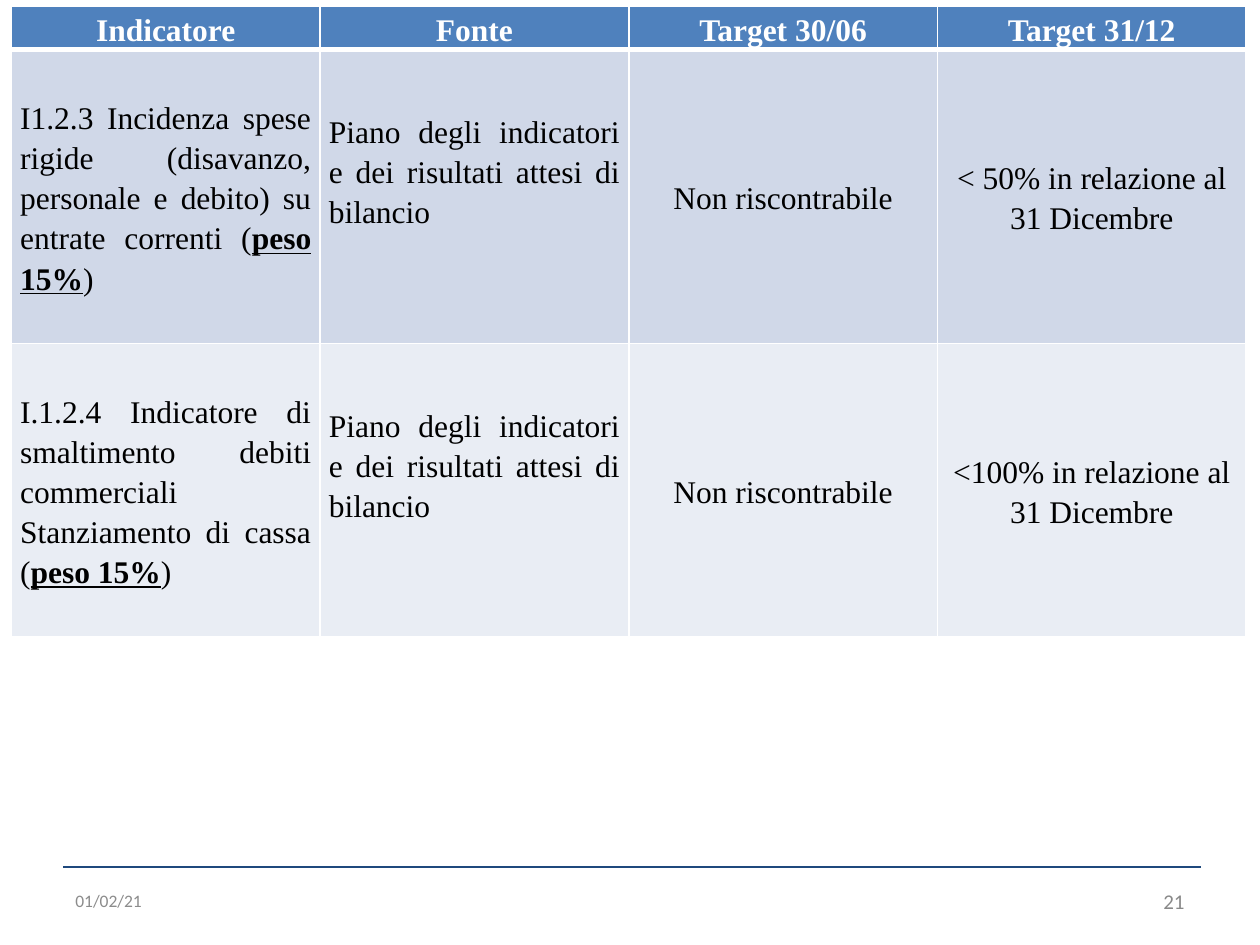
from dataclasses import dataclass

from lxml import etree
from pptx import Presentation
from pptx.dml.color import RGBColor
from pptx.enum.text import MSO_ANCHOR, PP_ALIGN
from pptx.oxml.ns import qn
from pptx.util import Inches, Pt

MIDDLE = MSO_ANCHOR.MIDDLE
LEFT, CENTER, RIGHT = PP_ALIGN.LEFT, PP_ALIGN.CENTER, PP_ALIGN.RIGHT
JUSTIFY = PP_ALIGN.JUSTIFY


@dataclass(frozen=True)
class Theme:
    serif: str = "Times New Roman"
    sans: str = "Calibri"
    head: str = "4F81BD"
    bands: tuple = ("D0D8E8", "E9EDF4")
    white: str = "FFFFFF"
    ink: str = "000000"
    rule: str = "1F497D"
    date: str = "8C8C8C"
    page: str = "898989"
    body_size: int = 18
    date_size: int = 10
    page_size: int = 12


THEME = Theme()
HEADS = ("Indicatore", "Fonte", "Target 30/06", "Target 31/12")
SOURCE = "Piano degli indicatori e dei risultati attesi di bilancio"
NONE_YET = "Non riscontrabile"
WEIGHT = "peso 15%"
ROWS = (
    ("I1.2.3 Incidenza spese rigide (disavanzo, personale e debito) "
     "su entrate correnti (", SOURCE, NONE_YET,
     "< 50% in relazione al 31 Dicembre"),
    ("I.1.2.4 Indicatore di smaltimento debiti commerciali "
     "Stanziamento di cassa (", SOURCE, NONE_YET,
     "<100% in relazione al 31 Dicembre"),
)


def style(para, face, size, color, align):
    para.alignment = align
    font = para.font
    font.name, font.size = face, Pt(size)
    font.color.rgb = RGBColor.from_string(color)


def edge(cell, top, bottom):
    """Draw white borders; they must come before the fill in the XML."""
    props = cell._tc.get_or_add_tcPr()
    sides = (("L", 1), ("R", 1), ("T", top), ("B", bottom))
    for spot, (side, width) in enumerate(sides):
        line = etree.Element(qn(f"a:ln{side}"), w=str(Pt(width)))
        fill = etree.SubElement(line, qn("a:solidFill"))
        etree.SubElement(fill, qn("a:srgbClr"), val=THEME.white)
        props.insert(spot, line)


def fill_cell(cell, text, back, color, align):
    cell.fill.solid()
    cell.fill.fore_color.rgb = RGBColor.from_string(back)
    cell.vertical_anchor = MIDDLE
    cell.margin_left = cell.margin_right = Inches(0.07)
    cell.margin_top = cell.margin_bottom = 0
    para = cell.text_frame.paragraphs[0]
    para.add_run().text = text
    para.line_spacing = 1.15
    style(para, THEME.serif, THEME.body_size, color, align)
    return para


def add_weight(para):
    run = para.add_run()
    run.text = WEIGHT
    run.font.bold = run.font.underline = True
    para.add_run().text = ")"


def add_targets(slide, left, top, width, head, body):
    """Place the table; head and body are row heights."""
    grid = slide.shapes.add_table(
        len(ROWS) + 1, len(HEADS), left, top, width,
        head + body * len(ROWS)).table
    for col in grid.columns:
        col.width = width // len(HEADS)
    grid.rows[0].height = head
    for col, text in enumerate(HEADS):
        cell = grid.cell(0, col)
        para = fill_cell(cell, text, THEME.head, THEME.white, CENTER)
        para.font.bold = True
        edge(cell, 1, 3)
    for row, (texts, band) in enumerate(zip(ROWS, THEME.bands), 1):
        grid.rows[row].height = body
        for col, text in enumerate(texts):
            cell = grid.cell(row, col)
            align = JUSTIFY if col < 2 else CENTER
            para = fill_cell(cell, text, band, THEME.ink, align)
            para.space_after = Pt(6)
            if col == 0:
                add_weight(para)
            elif col == 1:
                cell.margin_bottom = Pt(30)
            edge(cell, 3 if row == 1 else 1, 1)


def add_label(slide, box, text, size, color, align):
    frame = slide.shapes.add_textbox(*box).text_frame
    frame.word_wrap = True
    frame.vertical_anchor = MIDDLE
    para = frame.paragraphs[0]
    para.text = text
    style(para, THEME.sans, size, color, align)


def add_footer(slide, left, top, width, height):
    rule = slide.shapes.add_connector(
        1, left, top, left + width + Inches(0.03), top)
    rule.line.color.rgb = RGBColor.from_string(THEME.rule)
    rule.line.width = Pt(1.5)
    etree.SubElement(rule._element.spPr, qn("a:effectLst"))
    part, y = Inches(2.33), top + Inches(0.07)
    add_label(slide, (left, y, part, height), "01/02/21",
              THEME.date_size, THEME.date, LEFT)
    add_label(slide, (left + width - part, y, part, height), "21",
              THEME.page_size, THEME.page, RIGHT)


def main():
    deck = Presentation()
    deck.slide_width, deck.slide_height = Inches(10), Inches(7.5)
    slide = deck.slides.add_slide(deck.slide_layouts[6])
    add_footer(slide, Inches(0.5), Inches(6.88), Inches(9), Inches(0.4))
    add_targets(slide, Inches(0.09), Inches(0.05), Inches(9.8),
                Inches(0.33), Inches(2.33))
    deck.save("out.pptx")


if __name__ == "__main__":
    main()
